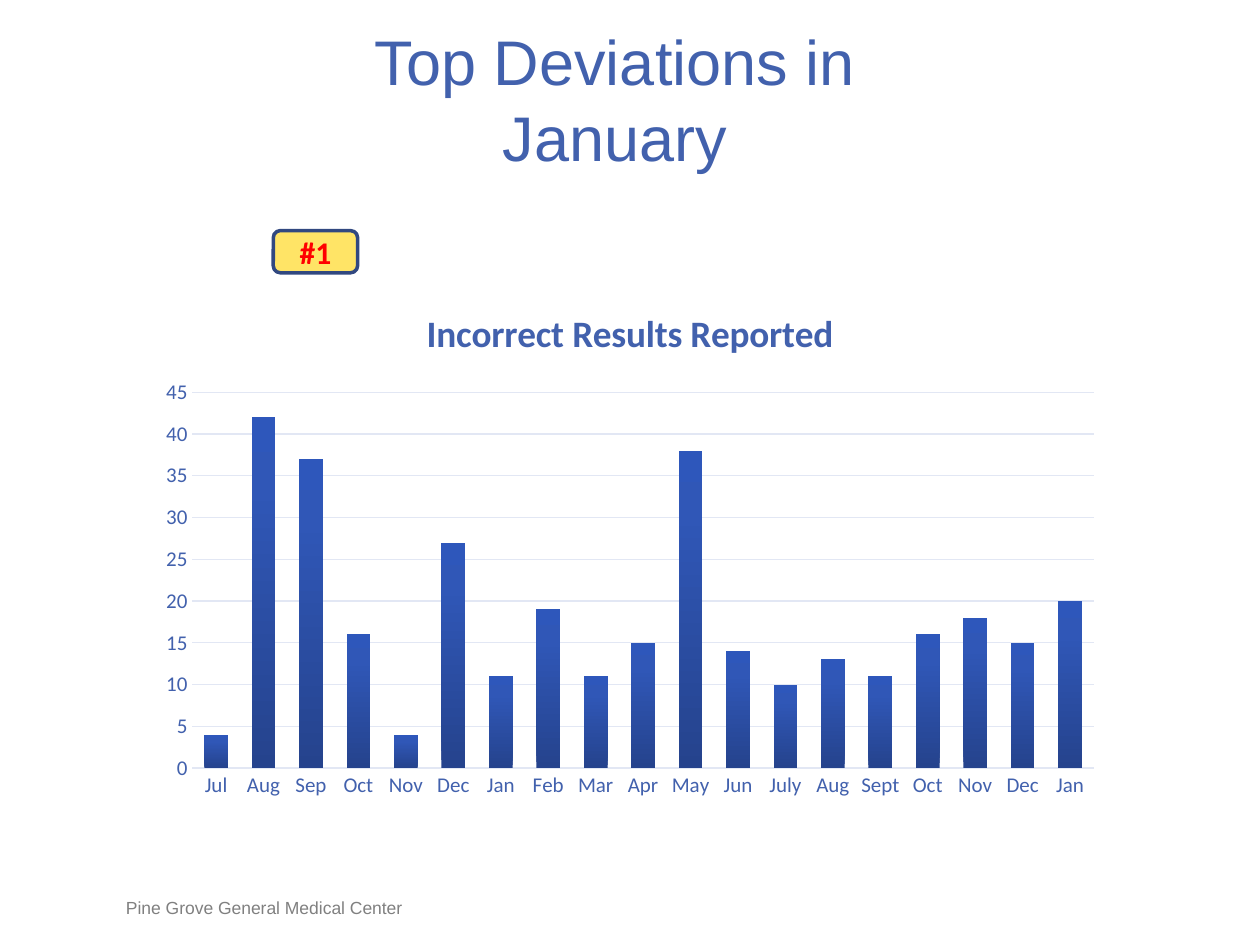
from copy import deepcopy

from pptx import Presentation
from pptx.chart.data import CategoryChartData
from pptx.dml.color import RGBColor
from pptx.enum.chart import XL_CHART_TYPE, XL_TICK_MARK
from pptx.enum.shapes import MSO_SHAPE
from pptx.enum.text import MSO_ANCHOR, PP_ALIGN
from pptx.util import Cm, Pt

COLORS = {
    "blue": "4261AD",
    "navy": "314880",
    "yellow": "FFE466",
    "red": "FF0000",
    "gray": "808080",
    "grid": "E2E7F4",
    "bar_base": "25438D",
    "bar_mid": "3057B7",
    "bar_top": "2E57BB",
}
MONTHS = ["Jul", "Aug", "Sep", "Oct", "Nov", "Dec", "Jan", "Feb", "Mar", "Apr",
          "May", "Jun", "July", "Aug", "Sept", "Oct", "Nov", "Dec", "Jan"]
REPORTS = [4, 42, 37, 16, 4, 27, 11, 19, 11, 15, 38, 14, 10, 13, 11, 16, 18, 15, 20]


class Deck:
    """Holds the style and the current slide, and adds each kind of element."""

    def __init__(self, width, height):
        self.prs = Presentation()
        self.prs.slide_width, self.prs.slide_height = Cm(width), Cm(height)
        self.s = self.prs.slides.add_slide(self.prs.slide_layouts[6])

    def color(self, name):
        return RGBColor.from_string(COLORS[name])

    def font(self, font, size, color, name="Calibri", bold=False):
        font.name, font.size, font.bold = name, Pt(size), bold
        font.color.rgb = self.color(color)

    def line(self, line, color, width):
        line.color.rgb = self.color(color)
        line.width = Pt(width)

    def text(self, text, box, size, color, align=PP_ALIGN.LEFT, anchor=MSO_ANCHOR.TOP):
        tf = self.s.shapes.add_textbox(*map(Cm, box)).text_frame
        tf.word_wrap = True
        tf.vertical_anchor = anchor
        tf.margin_left = tf.margin_right = tf.margin_top = tf.margin_bottom = 0
        p = tf.paragraphs[0]
        p.text, p.alignment = text, align
        self.font(p.font, size, color, "Arial")

    def badge(self, text, box):
        sp = self.s.shapes.add_shape(MSO_SHAPE.ROUNDED_RECTANGLE, *map(Cm, box))
        sp.shadow.inherit = False
        sp.fill.solid()
        sp.fill.fore_color.rgb = self.color("yellow")
        self.line(sp.line, "navy", 2)
        tf = sp.text_frame
        tf.vertical_anchor = MSO_ANCHOR.MIDDLE
        p = tf.paragraphs[0]
        p.text, p.alignment = text, PP_ALIGN.CENTER
        self.font(p.font, 18, "red", bold=True)

    def chart(self, title, cats, vals, box):
        data = CategoryChartData()
        data.categories = cats
        data.add_series(title, vals)
        chart = self.s.shapes.add_chart(
            XL_CHART_TYPE.COLUMN_CLUSTERED, *map(Cm, box), data).chart
        self.font(chart.font, 12, "blue")
        chart.has_legend = False
        chart.has_title = True
        p = chart.chart_title.text_frame.paragraphs[0]
        p.text = title
        self.font(p.font, 21.3, "blue", bold=True)
        chart.chart_title.include_in_layout = False

        for axis in (chart.category_axis, chart.value_axis):
            axis.major_tick_mark = axis.minor_tick_mark = XL_TICK_MARK.NONE
            self.font(axis.tick_labels.font, 12, "blue")
        self.line(chart.category_axis.format.line, "grid", 0.75)
        axis = chart.value_axis
        axis.format.line.fill.background()
        axis.minimum_scale, axis.maximum_scale, axis.major_unit = 0, 45, 5
        self.line(axis.major_gridlines.format.line, "grid", 0.75)

        plot = chart.plots[0]
        plot.gap_width, plot.overlap, plot.vary_by_categories = 100, -24, False
        self.gradient(plot.series[0], [(0, "bar_base"), (0.8, "bar_mid"), (1, "bar_top")])

    def gradient(self, series, stops):
        fill = series.format.fill
        fill.gradient()
        fill.gradient_angle = 90
        gs_list = series._element.xpath(".//a:gsLst")[0]
        gs_list.append(deepcopy(gs_list[-1]))
        for stop, (position, color) in zip(fill.gradient_stops, stops):
            stop.position = position
            stop.color.rgb = self.color(color)


def main():
    deck = Deck(25.4, 19.05)
    deck.text("Pine Grove General Medical Center", (2.54, 18.08, 8.05, 0.43), 10, "gray",
              anchor=MSO_ANCHOR.BOTTOM)
    deck.text("Top Deviations in January", (5.51, 0.46, 13.77, 3.07), 36, "blue",
              align=PP_ALIGN.CENTER)
    deck.badge("#1", (5.51, 4.65, 1.7, 0.85))
    deck.chart("Incorrect Results Reported", MONTHS, REPORTS, (2.96, 5.72, 19.48, 10.58))
    deck.prs.save("out.pptx")


if __name__ == "__main__":
    main()
